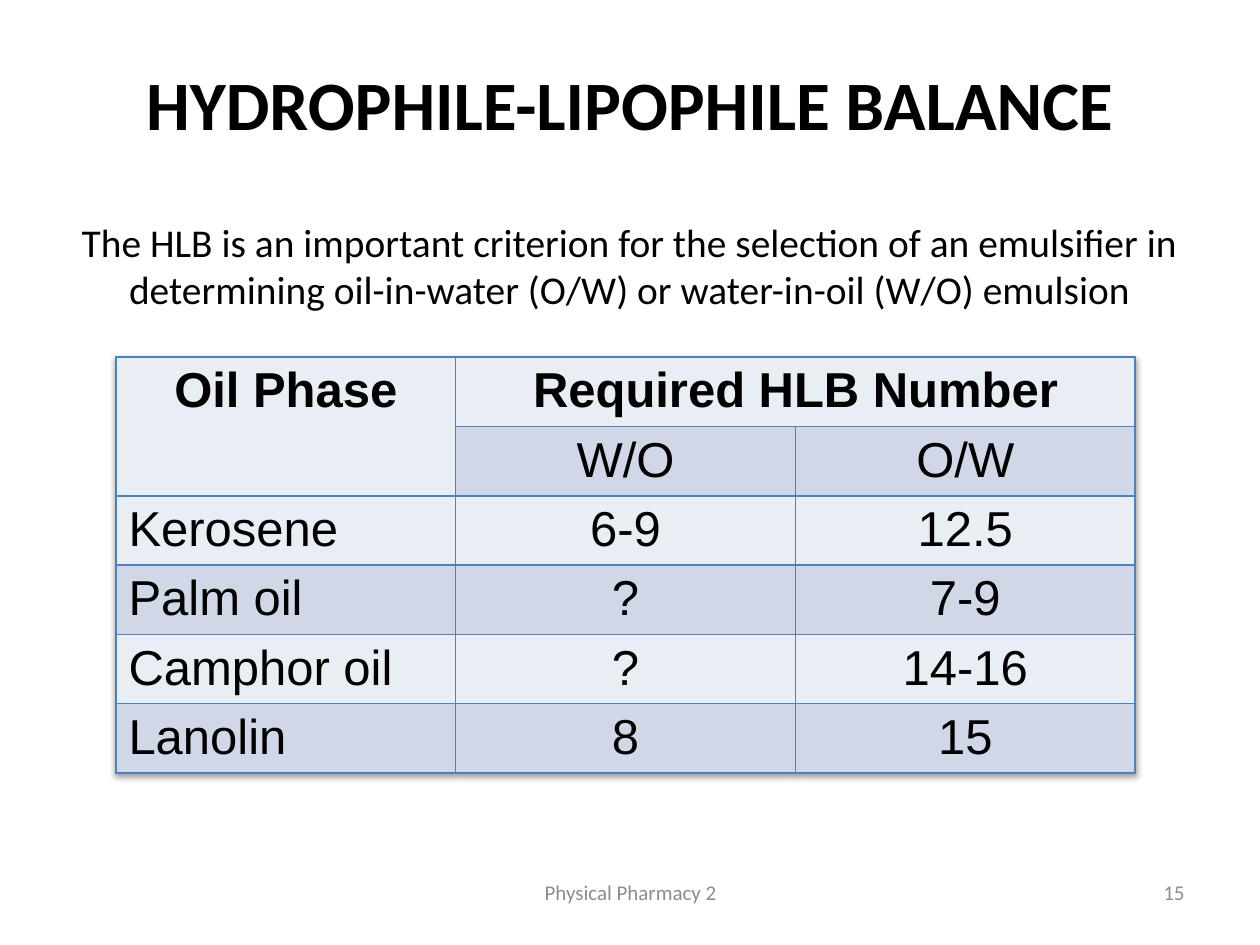
from dataclasses import dataclass

from lxml import etree
from pptx import Presentation
from pptx import util as u
from pptx.dml.color import RGBColor
from pptx.enum import text
from pptx.oxml.ns import qn

ALIGN = text.PP_ALIGN


@dataclass(frozen=True)
class Theme:
    ink: str = "000000"
    muted: str = "8C8C8C"
    border: str = "4F81BD"
    bands: tuple[str, str] = ("E9EDF4", "D0D8E8")
    text_font: str = "Calibri"
    table_font: str = "Arial"
    heading_size: float = 39.6
    body_size: float = 22.5
    table_size: float = 28
    footer_size: float = 12


@dataclass(frozen=True)
class Box:
    """A rectangle given in shares of the slide's width and height."""
    left: float
    top: float
    width: float
    height: float

    def on(self, presentation) -> tuple[int, int, int, int]:
        wide, high = presentation.slide_width, presentation.slide_height
        return (int(self.left * wide), int(self.top * high),
                int(self.width * wide), int(self.height * high))


@dataclass(frozen=True)
class Footer:
    wording: str
    box: Box
    alignment: ALIGN


THEME = Theme()
TITLE_BOX = Box(0.05, 0.04, 0.9, 0.316)
TABLE_BOX = Box(0.092, 0.378, 0.809, 0.44)
HEADING = "HYDROPHILE-LIPOPHILE BALANCE"
SUMMARY = ("The HLB is an important criterion for the selection of an emulsifier in "
           "determining oil-in-water (O/W) or water-in-oil (W/O) emulsion")
HLB_ROWS = [
    ("Oil Phase", "Required HLB Number", ""),
    ("", "W/O", "O/W"),
    ("Kerosene", "6-9", "12.5"),
    ("Palm oil", "?", "7-9"),
    ("Camphor oil", "?", "14-16"),
    ("Lanolin", "8", "15"),
]
HEADER_ROWS = 2
FOOTERS = [
    Footer("Physical Pharmacy 2", Box(0.342, 0.911, 0.317, 0.066), ALIGN.CENTER),
    Footer("15", Box(0.717, 0.911, 0.233, 0.066), ALIGN.RIGHT),
]


def style(paragraph, font: str, size: float, color: str, alignment: ALIGN,
          bold: bool = False) -> None:
    paragraph.alignment = alignment
    paragraph.font.name = font
    paragraph.font.size = u.Pt(size)
    paragraph.font.bold = bold
    paragraph.font.color.rgb = RGBColor.from_string(color)


def add_title(presentation, slide) -> None:
    title = slide.shapes.title
    title.left, title.top, title.width, title.height = TITLE_BOX.on(presentation)
    frame = title.text_frame
    frame.auto_size = text.MSO_AUTO_SIZE.NONE
    frame.vertical_anchor = text.MSO_ANCHOR.MIDDLE
    heading, summary = frame.paragraphs[0], frame.add_paragraph()
    heading.text, summary.text = HEADING, SUMMARY
    style(heading, THEME.text_font, THEME.heading_size, THEME.ink, ALIGN.CENTER, True)
    style(summary, THEME.text_font, THEME.body_size, THEME.ink, ALIGN.CENTER)
    summary.space_before = u.Pt(42)


def outline_cell(cell) -> None:
    properties = cell._tc.get_or_add_tcPr()
    for index, side in enumerate(("lnL", "lnR", "lnT", "lnB")):
        line = etree.Element(qn(f"a:{side}"), w=str(u.Pt(1)))
        fill = etree.SubElement(line, qn("a:solidFill"))
        etree.SubElement(fill, qn("a:srgbClr"), val=THEME.border)
        properties.insert(index, line)


def add_table_shadow(table) -> None:
    effects = etree.Element(qn("a:effectLst"))
    shadow = etree.SubElement(effects, qn("a:outerShdw"), blurRad="40000",
                              dist="20000", dir="5400000", rotWithShape="0")
    color = etree.SubElement(shadow, qn("a:srgbClr"), val=THEME.ink)
    etree.SubElement(color, qn("a:alpha"), val="38000")
    table._tbl.tblPr.insert(0, effects)


def add_hlb_table(presentation, slide) -> None:
    table = slide.shapes.add_table(len(HLB_ROWS), len(HLB_ROWS[0]),
                                   *TABLE_BOX.on(presentation)).table
    table.first_row = table.horz_banding = False
    add_table_shadow(table)
    for row, wordings in enumerate(HLB_ROWS):
        for column, wording in enumerate(wordings):
            cell = table.cell(row, column)
            cell.text = wording
            cell.fill.solid()
            cell.fill.fore_color.rgb = RGBColor.from_string(THEME.bands[row % 2])
            outline_cell(cell)
            is_oil_name = column == 0 and row >= HEADER_ROWS
            style(cell.text_frame.paragraphs[0], THEME.table_font, THEME.table_size,
                  THEME.ink, ALIGN.LEFT if is_oil_name else ALIGN.CENTER, row == 0)
    table.cell(0, 0).merge(table.cell(1, 0))
    table.cell(0, 1).merge(table.cell(0, 2))


def add_footer(presentation, slide, footer: Footer) -> None:
    frame = slide.shapes.add_textbox(*footer.box.on(presentation)).text_frame
    frame.word_wrap = True
    frame.vertical_anchor = text.MSO_ANCHOR.MIDDLE
    paragraph = frame.paragraphs[0]
    paragraph.text = footer.wording
    style(paragraph, THEME.text_font, THEME.footer_size, THEME.muted, footer.alignment)


def main() -> None:
    presentation = Presentation()
    presentation.slide_width, presentation.slide_height = u.Inches(10), u.Inches(7.5)
    title_only = presentation.slide_layouts[5]
    slide = presentation.slides.add_slide(title_only)
    add_title(presentation, slide)
    add_hlb_table(presentation, slide)
    for footer in FOOTERS:
        add_footer(presentation, slide, footer)
    presentation.save("out.pptx")


if __name__ == "__main__":
    main()
